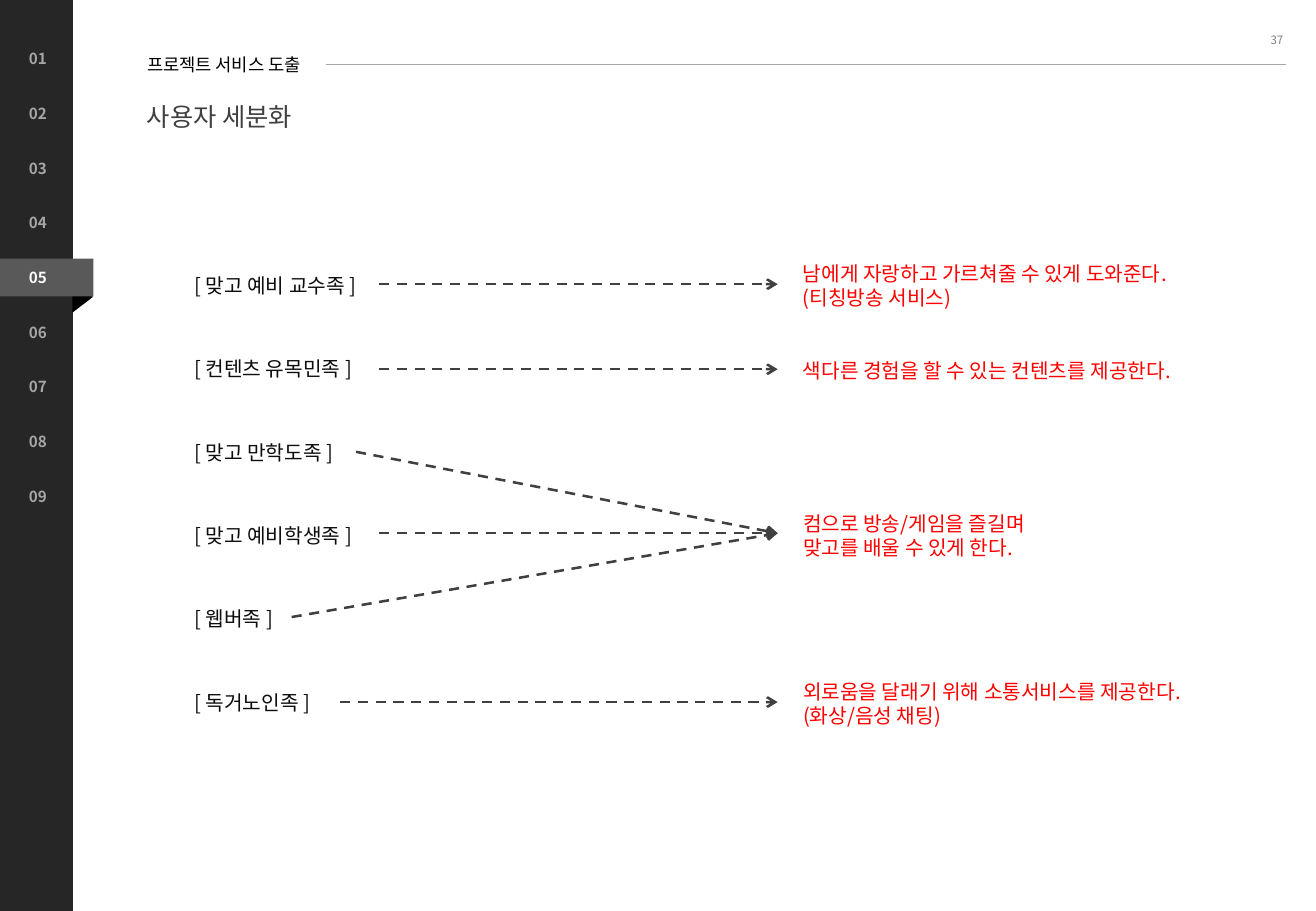
from dataclasses import dataclass

from lxml.etree import SubElement
from pptx import Presentation
from pptx.dml.color import RGBColor
from pptx.enum.dml import MSO_LINE
from pptx.enum.shapes import MSO_CONNECTOR, MSO_SHAPE
from pptx.enum.text import MSO_ANCHOR, PP_ALIGN
from pptx.oxml.ns import qn
from pptx.shapes.autoshape import Shape
from pptx.shapes.connector import Connector
from pptx.util import Inches, Pt

FONT = "Noto Sans CJK KR"
GRAY, DARK, RED = "A6A6A6", "404040", "FF0000"


@dataclass
class Label:
    text: str
    left: float
    top: float
    width: float
    height: float
    size: float = 12
    color: str = "0D0D0D"
    bold: bool = False


@dataclass
class Arrow:
    start_x: float
    start_y: float
    end_y: float


def rgb(color: str) -> RGBColor:
    return RGBColor.from_string(color)


def add_label(label: Label, **frame_format) -> Shape:
    box = slide.shapes.add_textbox(Inches(label.left), Inches(label.top),
                                   Inches(label.width), Inches(label.height))
    for name, value in ({"word_wrap": True} | frame_format).items():
        setattr(box.text_frame, name, value)
    font_format = {"name": FONT, "size": Pt(label.size), "bold": label.bold}
    box.text_frame.text = label.text
    for paragraph in box.text_frame.paragraphs:
        for run in paragraph.runs:
            for name, value in font_format.items():
                setattr(run.font, name, value)
            run.font.color.rgb = rgb(label.color)
            # Hangul takes the East Asian font
            SubElement(run.font._element, qn("a:ea")).set("typeface", FONT)
    return box


def add_block(kind: MSO_SHAPE, left: float, top: float, width: float,
              height: float, color: str, rotation: float = 0) -> None:
    block = slide.shapes.add_shape(kind, Inches(left), Inches(top),
                                   Inches(width), Inches(height))
    block.shadow.inherit = False
    block.fill.solid()
    block.fill.fore_color.rgb = rgb(color)
    block.line.fill.background()
    block.rotation = rotation


def add_line(start_x: float, start_y: float, end_x: float, end_y: float,
             color: str, width: float) -> Connector:
    line = slide.shapes.add_connector(
        MSO_CONNECTOR.STRAIGHT, Inches(start_x), Inches(start_y),
        Inches(end_x), Inches(end_y))
    line.line.color.rgb = rgb(color)
    line.line.width = Pt(width)
    SubElement(line._element.spPr, qn("a:effectLst"))
    return line


def add_arrow(arrow: Arrow) -> None:
    line = add_line(arrow.start_x, arrow.start_y, 6.4, arrow.end_y, DARK, 1.5)
    line.line.dash_style = MSO_LINE.DASH
    SubElement(line.line._get_or_add_ln(), qn("a:tailEnd")).set("type", "arrow")


presentation = Presentation()
presentation.slide_width = Inches(10.83)
presentation.slide_height = Inches(7.5)
slide = presentation.slides.add_slide(presentation.slide_layouts[6])

# Sidebar with the current chapter's ribbon
add_block(MSO_SHAPE.RECTANGLE, 0, -0.01, 0.6, 7.51, "262626")
add_block(MSO_SHAPE.ISOSCELES_TRIANGLE, 0.55, 2.36, 0.26, 0.17, "000000", 90)
add_block(MSO_SHAPE.RECTANGLE, 0, 2.13, 0.77, 0.31, "595959")

CURRENT_CHAPTER = 5
for chapter in range(1, 10):
    color = "FFFFFF" if chapter == CURRENT_CHAPTER else GRAY
    add_label(Label(f"{chapter:02}", 0.14, 0.36 + 0.45 * (chapter - 1),
                    0.51, 0.25, 9, color, True))

# Page number
page_number = add_label(Label("37", 8.22, 0.13, 2.44, 0.4, 6.8, "808080"),
                        vertical_anchor=MSO_ANCHOR.MIDDLE)
page_number.text_frame.paragraphs[0].alignment = PP_ALIGN.RIGHT

# Header
section = add_label(
    Label("프로젝트 서비스 도출", 1.14, 0.42, 1.63, 0.24, 10.5, "000000"),
    margin_left=Inches(0.07), margin_right=Inches(0.07),
    margin_top=Inches(0.04), margin_bottom=Inches(0.04))
section.text_frame.paragraphs[0].line_spacing = 0.9
title = add_label(Label("사용자 세분화", 1.21, 0.76, 1.27, 0.32, 15, DARK),
                  word_wrap=False, margin_left=0, margin_right=0,
                  margin_top=0, margin_bottom=0)
title.text_frame.paragraphs[0].line_spacing = Pt(23.2)
add_line(2.68, 0.53, 10.58, 0.53, GRAY, 0.5)

# User segments
SEGMENTS = ["맞고 예비 교수족", "컨텐츠 유목민족", "맞고 만학도족",
            "맞고 예비학생족", "웹버족", "독거노인족"]
for row, segment in enumerate(SEGMENTS):
    add_label(Label(f"[ {segment} ]", 1.5, 2.2 + 0.686 * row, 2.59, 0.3))

# Arrows from segments to services
ARROWS = [
    Arrow(3.12, 2.34, 2.34),
    Arrow(3.12, 3.04, 3.04),
    Arrow(2.93, 3.72, 4.39),
    Arrow(3.12, 4.39, 4.39),
    Arrow(2.4, 5.08, 4.39),
    Arrow(2.8, 5.78, 5.78),
]
for arrow in ARROWS:
    add_arrow(arrow)

# Services
SERVICES = [
    Label("남에게 자랑하고 가르쳐줄 수 있게 도와준다.\n(티칭방송 서비스)",
          6.51, 2.1, 3.74, 0.5, color=RED),
    Label("색다른 경험을 할 수 있는 컨텐츠를 제공한다.",
          6.51, 2.9, 3.74, 0.3, color=RED),
    Label("컴으로 방송/게임을 즐길며\n맞고를 배울 수 있게 한다.",
          6.51, 4.16, 2.61, 0.5, color=RED),
    Label("외로움을 달래기 위해 소통서비스를 제공한다. (화상/음성 채팅)",
          6.51, 5.54, 3.41, 0.5, color=RED),
]
for service in SERVICES:
    add_label(service)

presentation.save("out.pptx")
